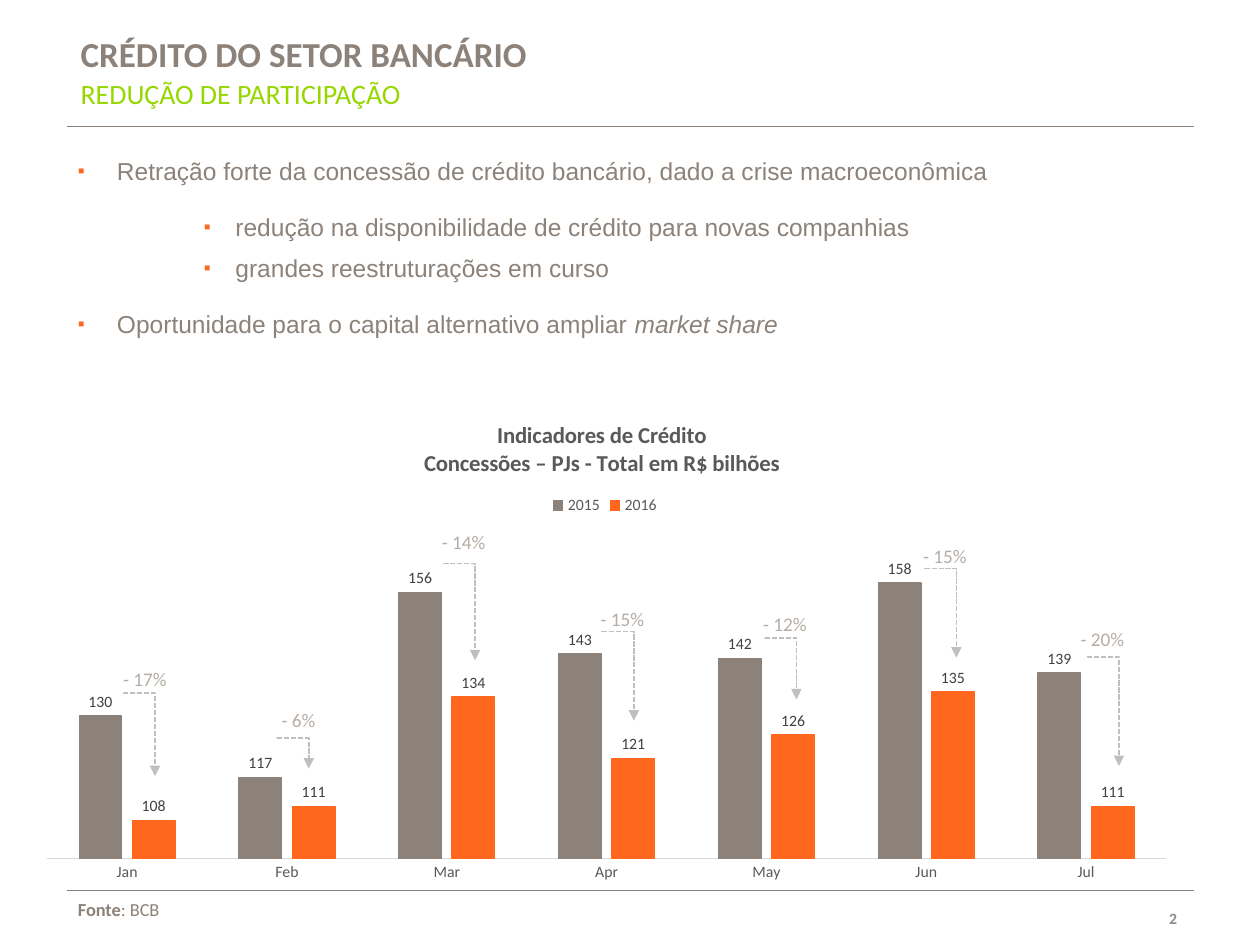
from typing import NamedTuple

from lxml.etree import SubElement
from pptx import Presentation
from pptx.chart.data import CategoryChartData
from pptx.dml.color import RGBColor
from pptx.enum.chart import XL_CHART_TYPE as ChartType
from pptx.enum.chart import XL_LABEL_POSITION as LabelPosition
from pptx.enum.chart import XL_LEGEND_POSITION as LegendPosition
from pptx.enum.chart import XL_TICK_MARK as TickMark
from pptx.enum.dml import MSO_LINE as LineStyle
from pptx.enum.shapes import MSO_CONNECTOR as ConnectorType
from pptx.enum.text import MSO_ANCHOR as Anchor
from pptx.enum.text import PP_ALIGN as Align
from pptx.oxml import parse_xml
from pptx.oxml.ns import nsdecls, qn
from pptx.util import Inches, Pt

COLORS = {
    "taupe": "8C8279", "green": "97D700", "orange": "FF671F", "number": "8C8C8C",
    "drop": "B6ADA5", "arrow": "BFBFBF", "axis": "D9D9D9", "muted": "595959",
    "value": "404040",
}
ARROW_WIDTH = 0.25


class Run(NamedTuple):
    text: str
    bold: bool = False
    italic: bool = False


class Bullet(NamedTuple):
    runs: list[Run]
    margin: float
    hanging: float
    space_before: float


class Drop(NamedTuple):
    label: str
    label_left: float
    label_top: float
    arrow_left: float
    arrow_top: float
    arrow_bottom: float


BULLETS = [
    Bullet([Run("Retração forte da concessão de crédito bancário, dado a crise macroeconômica")],
           0.31, 0.31, 0),
    Bullet([Run("redução na disponibilidade de crédito para novas companhias")], 1.25, 0.25, 15),
    Bullet([Run("grandes reestruturações em curso")], 1.25, 0.25, 6.75),
    Bullet([Run("Oportunidade para o capital alternativo ampliar "), Run("market share", italic=True)],
           0.31, 0.31, 15),
]
DROPS = [
    Drop("- 17%", 0.82, 5.25, 0.98, 5.5, 6.16),
    Drop("- 6%", 2.04, 5.57, 2.2, 5.86, 6.1),
    Drop("- 14%", 3.35, 4.16, 3.52, 4.47, 5.24),
    Drop("- 15%", 4.61, 4.77, 4.78, 5.01, 5.72),
    Drop("- 12%", 5.9, 4.81, 6.07, 5.06, 5.55),
    Drop("- 15%", 7.17, 4.27, 7.34, 4.51, 5.22),
    Drop("- 20%", 8.42, 4.93, 8.63, 5.21, 6.08),
]
MONTHS = ["Jan", "Feb", "Mar", "Apr", "May", "Jun", "Jul"]
SERIES = {
    "2015": ([130, 117, 156, 143, 142, 158, 139], "taupe"),
    "2016": ([108, 111, 134, 121, 126, 135, 111], "orange"),
}


def rgb(name: str) -> RGBColor:
    return RGBColor.from_string(COLORS[name])


def style_font(font, size: float, color: str, name: str = "Calibri") -> None:
    font.name, font.size = name, Pt(size)
    font.color.rgb = rgb(color)


def add_runs(paragraph, runs: list[Run], size: float, color: str, name: str = "Calibri") -> None:
    for item in runs:
        run = paragraph.add_run()
        run.text = item.text
        style_font(run.font, size, color, name)
        run.font.bold, run.font.italic = item.bold, item.italic


def add_frame(slide, left: float, top: float, width: float, height: float):
    frame = slide.shapes.add_textbox(
        Inches(left), Inches(top), Inches(width), Inches(height)).text_frame
    frame.word_wrap = True
    return frame


def add_heading(slide, top: float, height: float, run: Run, size: float, color: str) -> None:
    frame = add_frame(slide, 0.64, top, 6.23, height)
    frame.margin_left = frame.margin_top = frame.margin_bottom = 0
    add_runs(frame.paragraphs[0], [run], size, color)


def add_line(slide, kind, left: float, top: float, right: float, bottom: float,
             color: str, width: float):
    connector = slide.shapes.add_connector(
        kind, Inches(left), Inches(top), Inches(right), Inches(bottom))
    connector.line.color.rgb = rgb(color)
    connector.line.width = Pt(width)
    SubElement(connector._element.spPr, qn("a:effectLst"))
    return connector


def add_bullets(slide) -> None:
    frame = add_frame(slide, 0.52, 1.19, 8.95, 1.53)
    for index, bullet in enumerate(BULLETS):
        paragraph = frame.add_paragraph() if index else frame.paragraphs[0]
        paragraph.space_before = Pt(bullet.space_before)
        properties = paragraph._p.get_or_add_pPr()
        properties.set("marL", str(Inches(bullet.margin)))
        properties.set("indent", str(-Inches(bullet.hanging)))
        color = SubElement(properties, qn("a:buClr"))
        SubElement(color, qn("a:srgbClr"), val=COLORS["orange"])
        SubElement(properties, qn("a:buSzPct"), val="80000")
        SubElement(properties, qn("a:buFont"), typeface="Arial")
        SubElement(properties, qn("a:buChar"), char="▪")
        add_runs(paragraph, bullet.runs, 14, "taupe", "Arial")


def add_drop(slide, drop: Drop) -> None:
    length = drop.arrow_bottom - drop.arrow_top
    left = drop.arrow_left + (ARROW_WIDTH - length) / 2
    top = drop.arrow_top + (length - ARROW_WIDTH) / 2
    arrow = add_line(slide, ConnectorType.ELBOW, left, top, left + length, top + ARROW_WIDTH,
                     "arrow", 1)
    arrow.line.dash_style = LineStyle.SQUARE_DOT
    SubElement(arrow.line._get_or_add_ln(), qn("a:tailEnd"), type="triangle")
    properties = arrow._element.spPr
    properties.xfrm.set("rot", str(270 * 60000))
    properties.xfrm.set("flipH", "1")
    adjustments = properties.find(qn("a:prstGeom")).find(qn("a:avLst"))
    SubElement(adjustments, qn("a:gd"), name="adj1", fmla="val 300")

    frame = add_frame(slide, drop.label_left, drop.label_top, 0.66, 0.25)
    frame.paragraphs[0].alignment = Align.CENTER
    add_runs(frame.paragraphs[0], [Run(drop.label)], 11, "drop")


def set_layout(element, inner: bool = False, **values: float) -> None:
    for old in element.findall(qn("c:layout")):
        element.remove(old)
    target = '<c:layoutTarget val="inner"/>' if inner else ""
    modes = '<c:xMode val="edge"/><c:yMode val="edge"/>'
    sizes = "".join(f'<c:{key} val="{value}"/>' for key, value in values.items())
    layout = parse_xml(f'<c:layout {nsdecls("c")}><c:manualLayout>{target}{modes}{sizes}'
                       "</c:manualLayout></c:layout>")
    element.insert(0 if inner else 1, layout)


def add_credit_chart(slide) -> None:
    data = CategoryChartData(number_format="#,##0")
    data.categories = MONTHS
    for name, (values, _) in SERIES.items():
        data.add_series(name, values)
    chart = slide.shapes.add_chart(ChartType.COLUMN_CLUSTERED, Inches(0.19), Inches(3.15),
                                   Inches(9.25), Inches(3.94), data).chart
    style_font(chart.font, 10, "muted")
    title = chart.chart_title.text_frame
    add_runs(title.paragraphs[0], [Run("Indicadores de Crédito", bold=True)], 13, "muted")
    add_runs(title.add_paragraph(),
             [Run("Concessões – PJs - Total em R$ bilhões", bold=True)], 13, "muted")
    set_layout(chart.chart_title._element, x=0.34, y=0.04)
    chart.has_legend = True
    chart.legend.position = LegendPosition.TOP
    chart.legend.include_in_layout = False
    style_font(chart.legend.font, 9, "muted")
    set_layout(chart.legend._element, x=0.45, y=0.19)

    chart.value_axis.minimum_scale, chart.value_axis.maximum_scale = 100, 170
    chart.value_axis.has_major_gridlines = False
    chart.value_axis.visible = False
    axis = chart.category_axis
    axis.major_tick_mark = TickMark.NONE
    axis.format.line.color.rgb = rgb("axis")
    axis.format.line.width = Pt(0.75)
    style_font(axis.tick_labels.font, 9, "muted")

    plot = chart.plots[0]
    plot.gap_width, plot.overlap = 150, -25
    plot.vary_by_categories = False
    for series in plot.series:
        color = rgb(SERIES[series.name][1])
        series.format.fill.solid()
        series.format.fill.fore_color.rgb = color
        series.format.line.color.rgb = color
        series.format.line.width = Pt(0.75)
        labels = series.data_labels
        labels.show_value = True
        labels.number_format, labels.number_format_is_linked = "#,##0", False
        labels.position = LabelPosition.OUTSIDE_END
        style_font(labels.font, 9, "value")
    set_layout(chart._chartSpace.chart.plotArea, True, x=0.02, y=0.26, w=0.96, h=0.67)


def main() -> None:
    presentation = Presentation()
    presentation.slide_width, presentation.slide_height = Inches(10), Inches(7.5)
    slide = presentation.slides.add_slide(presentation.slide_layouts[6])
    for top in (1, 7.07):
        add_line(slide, ConnectorType.STRAIGHT, 0.53, top, 9.48, top, "taupe", 0.5)
    add_heading(slide, 0.26, 0.34, Run("CRÉDITO DO SETOR BANCÁRIO", bold=True), 20, "taupe")
    add_heading(slide, 0.61, 0.27, Run("REDUÇÃO DE PARTICIPAÇÃO"), 16, "green")
    add_credit_chart(slide)
    add_bullets(slide)
    for drop in DROPS:
        add_drop(slide, drop)
    source = add_frame(slide, 0.52, 7.08, 8.32, 0.28).paragraphs[0]
    source.alignment = Align.JUSTIFY
    add_runs(source, [Run("Fonte", bold=True), Run(": BCB")], 10.5, "taupe")
    number = add_frame(slide, 8.99, 7.09, 0.45, 0.4)
    number.vertical_anchor = Anchor.MIDDLE
    number.paragraphs[0].alignment = Align.RIGHT
    add_runs(number.paragraphs[0], [Run("2", bold=True)], 9, "number")
    presentation.save("out.pptx")


if __name__ == "__main__":
    main()
